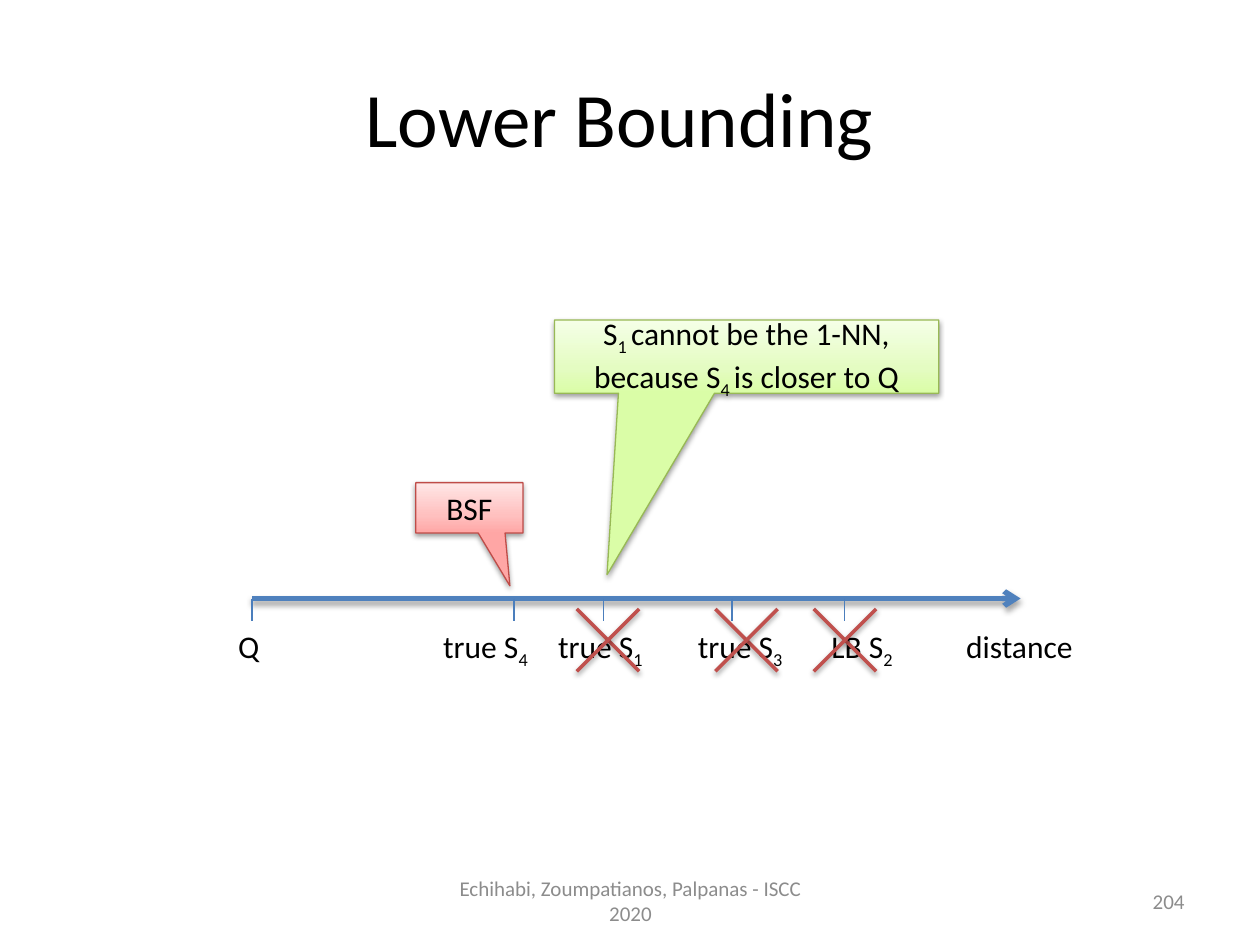
"""Build the Lower Bounding slide: a distance axis with labelled series and callouts."""
import copy

import pptx
import pptx.dml.color
import pptx.enum.dml
import pptx.enum.shapes
import pptx.enum.text
import pptx.oxml
import pptx.oxml.ns
import pptx.util
from lxml import etree

Pt = pptx.util.Pt
ALIGN = pptx.enum.text.PP_ALIGN
ANCHOR = pptx.enum.text.MSO_ANCHOR
FONT = "Calibri"
BLACK, GREY, AXIS, TICK, CROSS = "000000", "8C8C8C", "4F81BD", "4B7EBC", "C0504D"

TITLE = "Lower Bounding"
AXIS_LEFT, AXIS_RIGHT, AXIS_TOP = 144, 583.2, 342
TICK_HEIGHT, LABEL_TOP, LABEL_HEIGHT = 12.8, 355, 29
CROSS_TOP, CROSS_SIZE = 348, 35.6
LABELS = [
    {"text": [("Q", 0)], "left": 129, "width": 26.6, "tick": AXIS_LEFT},
    {"text": [("true S", 0), ("4", 1)], "left": 246.2, "width": 64, "tick": 293.8},
    {"text": [("true S", 0), ("1", 1)], "left": 311.8, "width": 64, "tick": 344.9, "cross": 347.4},
    {"text": [("true S", 0), ("3", 1)], "left": 391.7, "width": 64, "tick": 418.3, "cross": 426.6},
    {"text": [("LB S", 0), ("2", 1)], "left": 468, "width": 51, "tick": 482.4, "cross": 482.8},
    {"text": [("distance", 0)], "left": 545, "width": 76.3},
]
CALLOUTS = [
    {"text": [("S", 0), ("1 ", 1), ("cannot be the 1-NN, because S", 0), ("4 ", 1), ("is closer to Q", 0)],
     "box": (316.8, 182.9, 219.6, 41.8), "tip": (-0.363, 2.98), "line": "98B955",
     "gradient": ["DAFDA7", "E4FCC2", "F5FFE7"]},
    {"text": [("BSF", 0)],
     "box": (237.6, 275.8, 61.2, 28.8), "tip": (0.379, 1.549), "line": "BF4C48",
     "gradient": ["FFA6A5", "FFC0BF", "FFE7E7"]},
]
GRADIENT_POSITIONS = [0, 0.35, 1]
FOOTERS = [
    ("Echihabi, Zoumpatianos, Palpanas - ISCC 2020", (246.2, 500.4, 228.2, 28.8), ALIGN.CENTER),
    ("204", (516.2, 500.4, 167.8, 28.8), ALIGN.RIGHT),
]


def rgb(value):
    return pptx.dml.color.RGBColor.from_string(value)


def points(values):
    return [Pt(value) for value in values]


def write(shape, runs, size=18, color=BLACK, align=ALIGN.LEFT, anchor=ANCHOR.TOP, wrap=True):
    frame = shape.text_frame
    frame.word_wrap = wrap
    frame.vertical_anchor = anchor
    paragraph = frame.paragraphs[0]
    paragraph.alignment = align
    for text, subscript in runs:
        run = paragraph.add_run()
        run.text = text
        run.font.name, run.font.size = FONT, Pt(size)
        run.font.color.rgb = rgb(color)
        if subscript:
            run.font._element.set("baseline", "-25000")


def add_effects(shape, opacity=None, distance=1.6):
    namespace = pptx.oxml.ns.nsdecls("a")
    shadow = "" if opacity is None else (
        f'<a:outerShdw blurRad="{Pt(3.1)}" dist="{Pt(distance)}" dir="5400000" rotWithShape="0">'
        f'<a:srgbClr val="{BLACK}"><a:alpha val="{opacity * 1000}"/></a:srgbClr></a:outerShdw>')
    shape._element.spPr.append(pptx.oxml.parse_xml(f"<a:effectLst {namespace}>{shadow}</a:effectLst>"))


def add_line(shapes, start, end, color, width, **effects):
    line = shapes.add_connector(pptx.enum.shapes.MSO_CONNECTOR.STRAIGHT, *points(start + end))
    line.line.color.rgb = rgb(color)
    line.line.width = Pt(width)
    add_effects(line, **effects)
    return line


def add_axis(shapes):
    axis = add_line(shapes, (AXIS_LEFT, AXIS_TOP), (AXIS_RIGHT, AXIS_TOP), AXIS, 3, opacity=35, distance=1.8)
    outline = axis._element.spPr.find(pptx.oxml.ns.qn("a:ln"))
    etree.SubElement(outline, pptx.oxml.ns.qn("a:tailEnd"), type="arrow")


def add_cross(shapes, center):
    group = shapes.add_group_shape()
    left, right = center - CROSS_SIZE / 2, center + CROSS_SIZE / 2
    top, bottom = CROSS_TOP, CROSS_TOP + CROSS_SIZE
    for start, end in (((left, top), (right, bottom)), ((left, bottom), (right, top))):
        add_line(group.shapes, start, end, CROSS, 2, opacity=38)


def add_callout(shapes, callout):
    kind = pptx.enum.shapes.MSO_SHAPE.RECTANGULAR_CALLOUT
    shape = shapes.add_shape(kind, *points(callout["box"]))
    for index, value in enumerate(callout["tip"]):
        shape.adjustments[index] = value
    shape.fill.gradient()
    shape.fill.gradient_angle = 90
    stops = shape._element.spPr.find(".//" + pptx.oxml.ns.qn("a:gsLst"))
    stops.insert(1, copy.deepcopy(stops[0]))
    for stop, position, color in zip(shape.fill.gradient_stops, GRADIENT_POSITIONS, callout["gradient"]):
        stop.position = position
        stop.color.rgb = rgb(color)
    shape.line.color.rgb = rgb(callout["line"])
    shape.line.width = Pt(0.75)
    add_effects(shape, opacity=38)
    write(shape, callout["text"], align=ALIGN.CENTER, anchor=ANCHOR.MIDDLE)


def main():
    presentation = pptx.Presentation()
    presentation.slide_width, presentation.slide_height = Pt(720), Pt(540)
    slide = presentation.slides.add_slide(presentation.slide_layouts[5])
    shapes = slide.shapes
    title = shapes.title
    title.left, title.top, title.width, title.height = points((0, 21.6, 708, 90))
    write(title, [(TITLE, 0)], 44, align=ALIGN.CENTER, anchor=ANCHOR.MIDDLE)

    add_axis(shapes)
    for label in LABELS:
        box = shapes.add_textbox(*points((label["left"], LABEL_TOP, label["width"], LABEL_HEIGHT)))
        write(box, label["text"], wrap=False)
        if "tick" in label:
            add_line(shapes, (label["tick"], AXIS_TOP), (label["tick"], AXIS_TOP + TICK_HEIGHT), TICK, 0.75)
    for label in LABELS:
        if "cross" in label:
            add_cross(shapes, label["cross"])
    for callout in CALLOUTS:
        add_callout(shapes, callout)
    for text, box, align in FOOTERS:
        write(shapes.add_textbox(*points(box)), [(text, 0)], 12, GREY, align, ANCHOR.MIDDLE)
    presentation.save("out.pptx")


if __name__ == "__main__":
    main()
